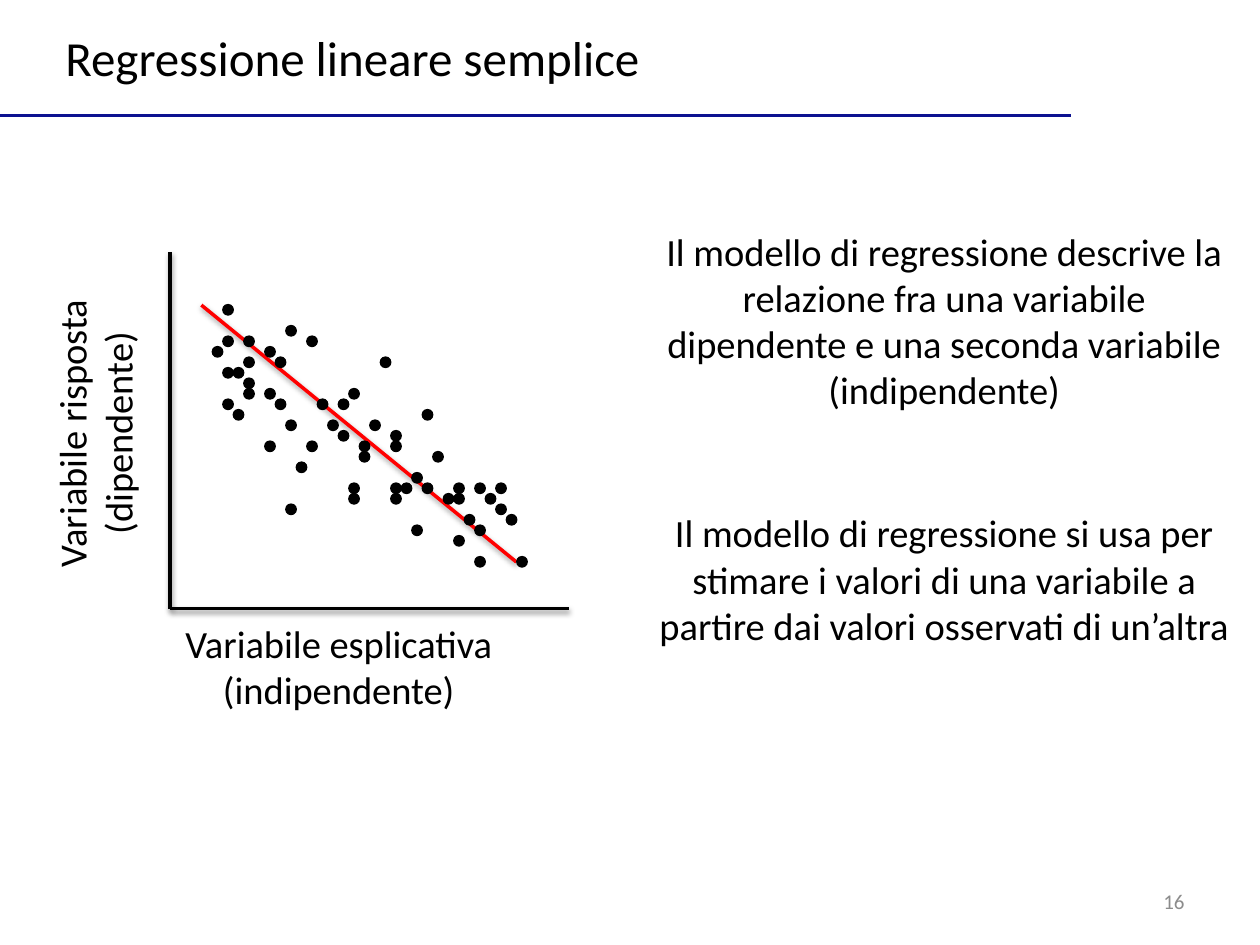
from lxml import etree
from pptx import Presentation
from pptx.dml.color import RGBColor
from pptx.enum import shapes, text
from pptx.oxml import ns
from pptx.util import Cm, Pt

COLORS = {"black": "000000", "red": "FF0000", "navy": "0C1290", "grey": "8C8C8C"}
FONT = "Calibri"
CENTER, LEFT, RIGHT = text.PP_ALIGN.CENTER, text.PP_ALIGN.LEFT, text.PP_ALIGN.RIGHT
NONE, GROW = text.MSO_AUTO_SIZE.NONE, text.MSO_AUTO_SIZE.SHAPE_TO_FIT_TEXT

# Start x, start y, end x, end y in cm; colour; shadow
REGRESSION_LINE = ((4.06, 6.15, 10.41, 11.33), "red", True)
TITLE_RULE = ((0, 2.33, 21.59, 2.33), "navy", False)
Y_AXIS = ((3.43, 12.27, 3.43, 5.08), "black", True)
X_AXIS = ((3.43, 12.27, 11.48, 12.27), "black", True)

# Box in cm, paragraphs, then whatever differs from the defaults
TEXTS = [
    ((1.07, 0.43, 12.19, 1.45), ["Regressione lineare semplice"],
     {"size": 28, "align": LEFT, "wrap": False}),
    ((3.45, 12.37, 6.76, 2.13), ["Variabile esplicativa", "(indipendente)"],
     {"wrap": False}),
    ((-1.07, 7.67, 5.94, 2.13), ["Variabile risposta", "(dipendente)"],
     {"wrap": False, "rotation": 270}),
    ((12.9, 4.45, 12.27, 4.01),
     ["Il modello di regressione descrive la relazione fra una variabile "
      "dipendente e una seconda variabile (indipendente)"], {}),
    ((12.9, 10.13, 12.27, 3.07),
     ["Il modello di regressione si usa per stimare i valori di una variabile "
      "a partire dai valori osservati di un’altra"], {}),
    ((18.21, 17.65, 5.92, 1.02), ["16"],
     {"size": 12, "align": RIGHT, "color": "grey", "autofit": NONE}),
]

# Scatter dots on a square grid: column -> rows, counted from the top left
DOTS = {
    0: [4], 1: [0, 3, 6, 9], 2: [6, 10], 3: [3, 5, 7, 8], 5: [4, 8, 13],
    6: [5, 9], 7: [2, 11, 19], 8: [15], 9: [3, 13], 10: [9], 11: [11],
    12: [9, 12], 13: [8, 17, 18], 14: [13, 14], 15: [11], 16: [5],
    17: [12, 13, 17, 18], 18: [17], 19: [16, 21], 20: [10, 17], 21: [14],
    22: [18], 23: [17, 18, 22], 24: [20], 25: [17, 21, 24], 26: [18],
    27: [17, 19], 28: [20], 29: [24],
}
DOT_ORIGIN = (4.28, 6.14)
DOT_STEP = 2.54 / 12


def rgb(name):
    return RGBColor.from_string(COLORS[name])


def add_line(slide, ends, color, shadow):
    line = slide.shapes.add_connector(
        shapes.MSO_CONNECTOR.STRAIGHT, *(Cm(value) for value in ends))
    line.line.color.rgb = rgb(color)
    line.line.width = Pt(2)
    effects = etree.SubElement(line._element.spPr, ns.qn("a:effectLst"))
    if shadow:
        outer = etree.SubElement(
            effects, ns.qn("a:outerShdw"), blurRad=str(Pt(3.1)),
            dist=str(Pt(1.6)), dir="5400000", rotWithShape="0")
        black = etree.SubElement(outer, ns.qn("a:srgbClr"), val=COLORS["black"])
        etree.SubElement(black, ns.qn("a:alpha"), val="38000")


def add_text(slide, box, paragraphs, size=22, align=CENTER, color="black",
             wrap=True, rotation=0, autofit=GROW):
    shape = slide.shapes.add_textbox(*(Cm(value) for value in box))
    shape.rotation = rotation
    frame = shape.text_frame
    frame.text = "\n".join(paragraphs)
    frame_format = {"word_wrap": wrap, "auto_size": autofit,
                    "vertical_anchor": text.MSO_ANCHOR.MIDDLE}
    for name, value in frame_format.items():
        setattr(frame, name, value)
    for paragraph in frame.paragraphs:
        paragraph.alignment = align
        font = paragraph.runs[0].font
        for name, value in {"name": FONT, "size": Pt(size)}.items():
            setattr(font, name, value)
        font.color.rgb = rgb(color)


def add_dot(slide, column, row):
    left, top = (start + index * DOT_STEP
                 for start, index in zip(DOT_ORIGIN, (column, row)))
    dot = slide.shapes.add_shape(
        shapes.MSO_SHAPE.OVAL, Cm(left), Cm(top), Cm(DOT_STEP), Cm(DOT_STEP))
    dot.shadow.inherit = False
    dot.fill.solid()
    dot.fill.fore_color.rgb = rgb("black")
    dot.line.color.rgb = rgb("black")
    dot.line.width = Pt(0.75)


def main():
    presentation = Presentation()
    presentation.slide_width, presentation.slide_height = Cm(25.4), Cm(19.05)
    slide = presentation.slides.add_slide(presentation.slide_layouts[6])
    for line in (REGRESSION_LINE, TITLE_RULE, Y_AXIS, X_AXIS):
        add_line(slide, *line)
    for column, rows in DOTS.items():
        for row in rows:
            add_dot(slide, column, row)
    for box, paragraphs, options in TEXTS:
        add_text(slide, box, paragraphs, **options)
    presentation.save("out.pptx")


if __name__ == "__main__":
    main()
